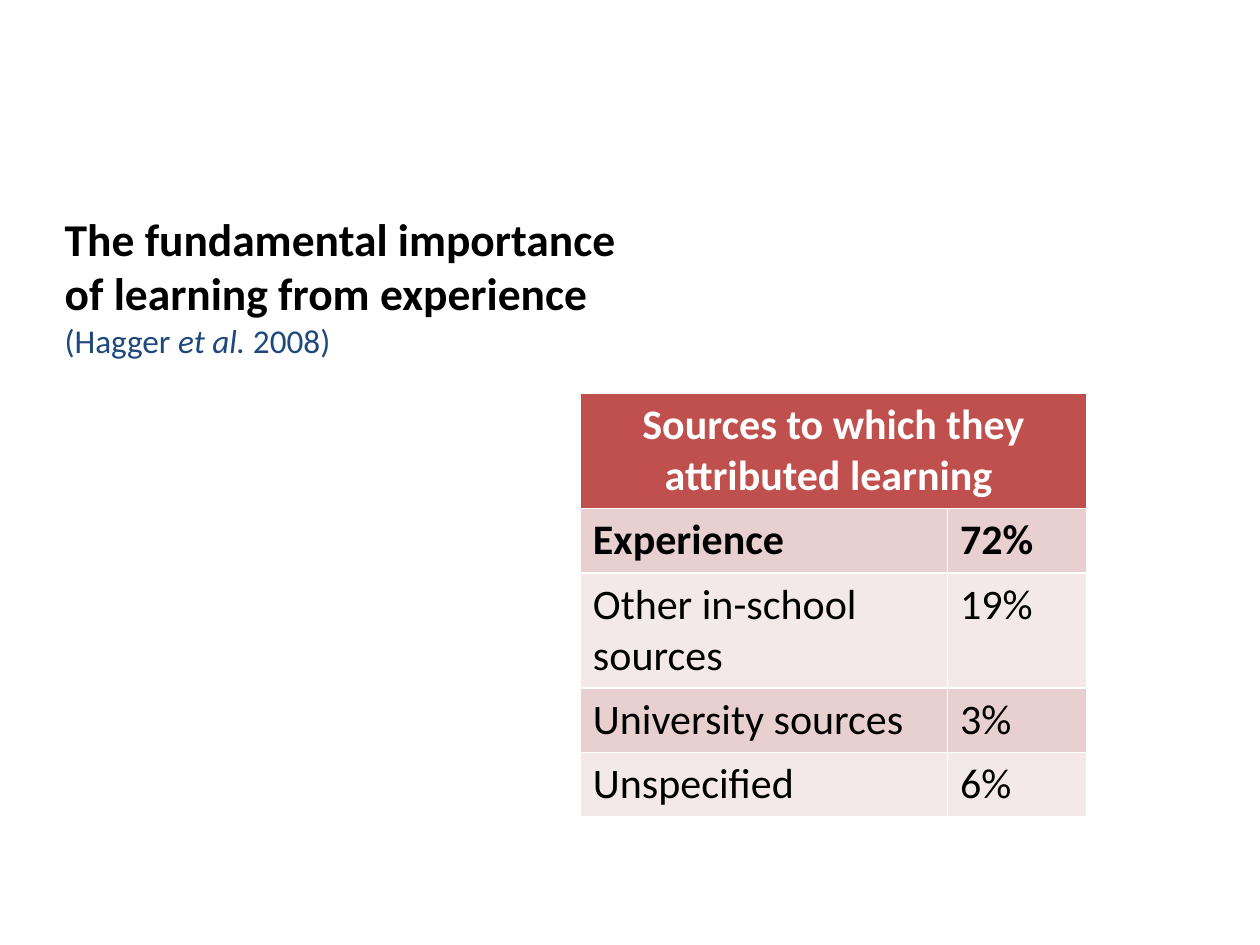
from typing import NamedTuple

from lxml import etree
from pptx import Presentation
from pptx.dml.color import RGBColor
from pptx.enum import text
from pptx.oxml.ns import qn
from pptx.util import Cm, Pt

FONT = "Calibri"
BLACK, WHITE, NAVY, RED = "000000", "FFFFFF", "1F497D", "C0504D"
BANDS = ("E8D0D0", "F4E9E9")


class Piece(NamedTuple):
    text: str
    size: int
    color: str = BLACK
    bold: bool = False
    italic: bool = False
    ends_line: bool = False


class Source(NamedTuple):
    name: str
    share: str
    bold: bool = False


HEADING = [
    Piece("The fundamental importance", 26, bold=True, ends_line=True),
    Piece("of learning from experience", 26, bold=True, ends_line=True),
    Piece("(Hagger ", 19, NAVY),
    Piece("et al. ", 19, NAVY, italic=True),
    Piece("2008)", 19, NAVY),
]
SOURCES = [
    Source("Experience", "72%", bold=True),
    Source("Other in-school sources", "19%"),
    Source("University sources", "3%"),
    Source("Unspecified", "6%"),
]
COLUMN_WIDTHS = (7.4, 2.8)
ROW_HEIGHTS = (2.28, 1.3, 1.98, 1.3, 1.3)


def rgb(color: str) -> RGBColor:
    return RGBColor.from_string(color)


def style_run(r, size: float, color: str, bold: bool, italic: bool = False) -> None:
    r.font.name, r.font.size = FONT, Pt(size)
    r.font.bold, r.font.italic = bold, italic
    r.font.color.rgb = rgb(color)


def break_line(p, size: int) -> None:
    """Add a line break that keeps the line at the given text size."""
    p.add_line_break()
    br = p._p.findall(qn("a:br"))[-1]
    etree.SubElement(br, qn("a:rPr")).set("sz", str(size * 100))


def write_heading(sp, pieces: list[Piece]) -> None:
    sp.left, sp.top, sp.width, sp.height = Cm(0.1), Cm(4.12), Cm(22.86), Cm(11.4)
    tf = sp.text_frame
    tf.auto_size = text.MSO_AUTO_SIZE.NONE
    p = tf.paragraphs[0]
    pPr = p._p.get_or_add_pPr()
    pPr.set("marL", str(Cm(0.95)))
    pPr.set("indent", "0")
    etree.SubElement(pPr, qn("a:buNone"))
    for piece in pieces:
        r = p.add_run()
        r.text = piece.text
        style_run(r, piece.size, piece.color, piece.bold, piece.italic)
        if piece.ends_line:
            break_line(p, piece.size)


def fill_cell(cell, words: str, fill: str, color: str, bold: bool) -> None:
    cell.fill.solid()
    cell.fill.fore_color.rgb = rgb(fill)
    cell.text_frame.text = words
    style_run(cell.text_frame.paragraphs[0].runs[0], 24, color, bold)


def add_source_table(s, sources: list[Source]) -> None:
    table = s.shapes.add_table(
        len(ROW_HEIGHTS), len(COLUMN_WIDTHS), Cm(11.7), Cm(7.93),
        Cm(sum(COLUMN_WIDTHS)), Cm(sum(ROW_HEIGHTS))).table
    for column, width in zip(table.columns, COLUMN_WIDTHS):
        column.width = Cm(width)
    for row, height in zip(table.rows, ROW_HEIGHTS):
        row.height = Cm(height)

    header = table.cell(0, 0)
    header.merge(table.cell(0, 1))
    fill_cell(header, "Sources to which they attributed learning ", RED, WHITE, True)
    header.text_frame.paragraphs[0].alignment = text.PP_ALIGN.CENTER

    for i, source in enumerate(sources):
        for j, words in enumerate((source.name, source.share)):
            fill_cell(table.cell(i + 1, j), words, BANDS[i % 2], BLACK, source.bold)


def main() -> None:
    prs = Presentation()
    prs.slide_width, prs.slide_height = Cm(25.4), Cm(19.05)
    s = prs.slides.add_slide(prs.slide_layouts[1])
    title, body = s.placeholders
    title.element.getparent().remove(title.element)
    write_heading(body, HEADING)
    add_source_table(s, SOURCES)
    prs.save("out.pptx")


if __name__ == "__main__":
    main()
